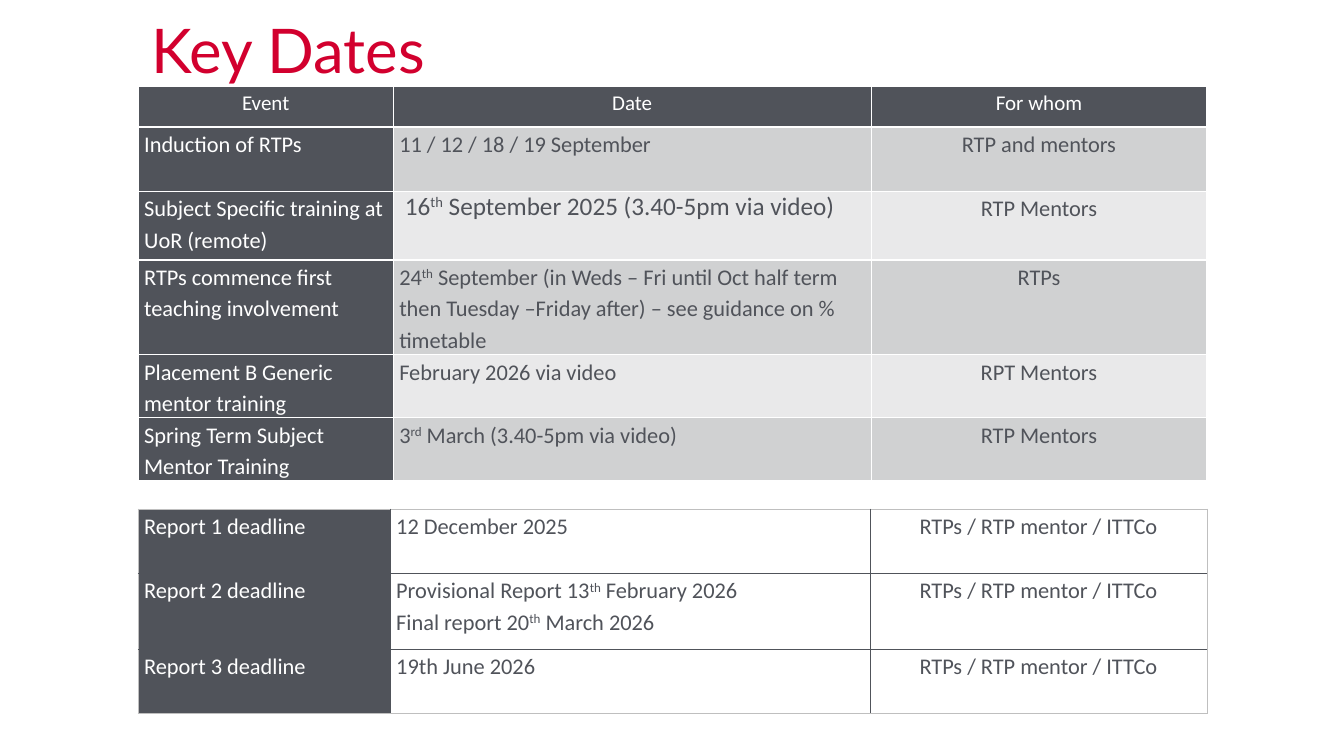
import pptx
import pptx.dml.color
import pptx.enum.text
import pptx.oxml
import pptx.oxml.ns
import pptx.util
from pptx.util import Inches

SLATE, WHITE, RED = "50535A", "FFFFFF", "D2002E"
BANDS = ["D0D1D2", "E9E9EA"]
OUTER_GREY = "BFBFBF"
ALIGN = pptx.enum.text.PP_ALIGN

EVENTS = [
    ("Event", "Date", "For whom"),
    ("Induction of RTPs", "11 / 12 / 18 / 19 September", "RTP and mentors"),
    ("Subject Specific training at UoR (remote)",
     " 16^th^ September 2025 (3.40-5pm via video)", "RTP Mentors"),
    ("RTPs commence first teaching involvement",
     "24^th^ September (in Weds – Fri until Oct half term then Tuesday –Friday after)"
     " – see guidance on % timetable", "RTPs"),
    ("Placement B Generic mentor training", "February 2026 via video", "RPT Mentors"),
    ("Spring Term Subject Mentor Training", "3^rd^ March (3.40-5pm via video)", "RTP Mentors"),
]
REPORT_READERS = "RTPs / RTP mentor / ITTCo"
REPORTS = [
    ("Report 1 deadline", "12 December 2025", REPORT_READERS),
    ("Report 2 deadline",
     "Provisional Report 13^th^ February 2026\nFinal report 20^th^ March 2026", REPORT_READERS),
    ("Report 3 deadline", "19th June 2026", REPORT_READERS),
]


def colour(value):
    return pptx.dml.color.RGBColor.from_string(value)


def add_spans(para, text, font_name, size, ink):
    for number, part in enumerate(text.split("^")):
        span = para.add_run()
        span.text = part
        span.font.name = font_name
        span.font.size = pptx.util.Pt(size)
        span.font.color.rgb = colour(ink)
        span.font.bold = False
        if number % 2:
            span.font._element.set("baseline", "30000")


def write_cell(cell, text, size, ink, align, spacing):
    cell.margin_left = cell.margin_right = Inches(0.06)
    cell.margin_top = cell.margin_bottom = 0
    for number, line in enumerate(text.split("\n")):
        frame = cell.text_frame
        para = frame.add_paragraph() if number else frame.paragraphs[0]
        para.alignment = align
        para.line_spacing = spacing
        add_spans(para, line, "Calibri", size, ink)


def set_borders(cell, borders):
    properties = cell._tc.get_or_add_tcPr()
    for side, (value, width) in zip("LRTB", borders):
        properties.append(pptx.oxml.parse_xml(
            f'<a:ln{side} {pptx.oxml.ns.nsdecls("a")} w="{pptx.util.Pt(width)}">'
            f'<a:solidFill><a:srgbClr val="{value}"/></a:solidFill></a:ln{side}>'))


def add_grid(page, box, widths, heights, rows):
    frame = page.shapes.add_table(len(rows), len(widths), *map(Inches, box))
    table = frame.table
    table.first_row = table.horz_banding = False
    for column, width in zip(table.columns, widths):
        column.width = Inches(width)
    for row, height in zip(table.rows, heights):
        row.height = Inches(height)
    return table


def add_events(page, box):
    table = add_grid(page, box, [2.53, 4.74, 3.33],
                     [0.4, 0.64, 0.68, 0.94, 0.62, 0.62], EVENTS)
    for r, row in enumerate(EVENTS):
        for c, text in enumerate(row):
            cell = table.cell(r, c)
            dark = r == 0 or c == 0
            large = (r, c) == (2, 1)
            size = 15 if r == 0 else 18 if large else 16
            align = ALIGN.CENTER if r == 0 or c == 2 else ALIGN.LEFT
            write_cell(cell, text, size, WHITE if dark else SLATE, align, 1.0 if large else 1.15)
            set_borders(cell, [(WHITE, 1)] * 4)
            cell.fill.solid()
            cell.fill.fore_color.rgb = colour(SLATE if dark else BANDS[(r - 1) % 2])


def add_reports(page, box):
    table = add_grid(page, box, [2.5, 4.76, 3.34], [0.64, 0.75, 0.64], REPORTS)
    for r, row in enumerate(REPORTS):
        for c, text in enumerate(row):
            cell = table.cell(r, c)
            align = ALIGN.CENTER if c == 2 else ALIGN.LEFT
            write_cell(cell, text, 16, SLATE if c else WHITE, align, 1.15)
            edges = [c == 0, c == 2, r == 0, r == 2]
            set_borders(cell, [(OUTER_GREY, 0.5) if edge else (SLATE, 1) for edge in edges])
            if c:
                cell.fill.background()
            else:
                cell.fill.solid()
                cell.fill.fore_color.rgb = colour(SLATE)


def add_title(page, box):
    title = page.shapes.title
    title.left, title.top, title.width, title.height = map(Inches, box)
    frame = title.text_frame
    frame.margin_left = frame.margin_right = frame.margin_top = frame.margin_bottom = 0
    frame.auto_size = pptx.enum.text.MSO_AUTO_SIZE.NONE
    frame.vertical_anchor = pptx.enum.text.MSO_ANCHOR.BOTTOM
    frame.word_wrap = True
    para = frame.paragraphs[0]
    para.alignment = ALIGN.LEFT
    para.line_spacing = 0.9
    add_spans(para, "Key Dates", "Lato", 44, RED)


def main():
    deck = pptx.Presentation()
    deck.slide_width, deck.slide_height = Inches(13.33), Inches(7.5)
    page = deck.slides.add_slide(deck.slide_layouts[5])
    add_title(page, (1.5, 0.18, 9.34, 0.68))
    add_events(page, (1.37, 0.86, 10.6, 3.9))
    add_reports(page, (1.37, 5.05, 10.6, 2.03))
    deck.save("out.pptx")


if __name__ == "__main__":
    main()
